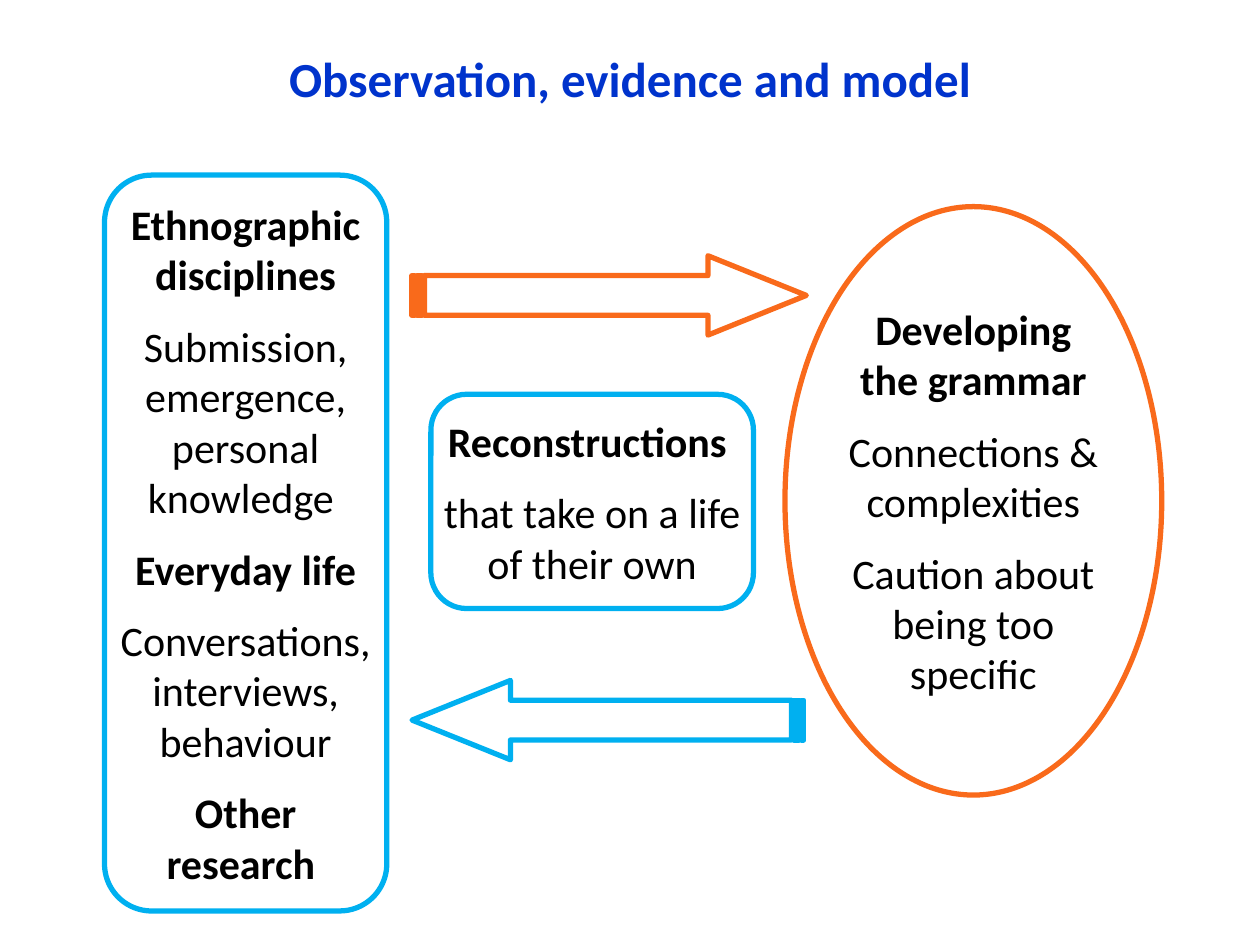
from lxml import etree
from pptx import Presentation
from pptx.dml.color import RGBColor
from pptx.enum import shapes, text
from pptx.oxml.ns import qn
from pptx.util import Inches
from pptx import util as u

HUES = {
    "title": "0033CC",
    "text": "000000",
    "fill": "FFFFFF",
    "field": "00B0F0",
    "model": "F96A1B",
}
FORMS = shapes.MSO_SHAPE


class Board:
    font = "Calibri"
    size = 24
    edge = 3
    clear = 75

    def __init__(self, slide):
        self.slide = slide

    def hue(self, name):
        return RGBColor.from_string(HUES[name])

    def label(self, para, words, bold, size, hue):
        para.alignment = text.PP_ALIGN.CENTER
        run = para.add_run()
        run.text = words
        run.font.name = self.font
        run.font.size = u.Pt(size)
        run.font.bold = bold
        run.font.color.rgb = self.hue(hue)

    def title(self, spot, words):
        box = self.slide.shapes.add_textbox(*map(Inches, spot))
        frame = box.text_frame
        frame.word_wrap = True
        frame.vertical_anchor = text.MSO_ANCHOR.MIDDLE
        self.label(frame.paragraphs[0], words, True, 28, "title")

    def shape(self, form, spot, hue):
        item = self.slide.shapes.add_shape(form, *map(Inches, spot))
        item.shadow.inherit = False
        item.fill.solid()
        item.fill.fore_color.rgb = self.hue("fill")
        tint = item.element.spPr.find(qn("a:solidFill"))[0]
        etree.SubElement(tint, qn("a:alpha"), val=str(self.clear * 1000))
        item.line.color.rgb = self.hue(hue)
        item.line.width = u.Pt(self.edge)
        return item

    def panel(self, form, spot, hue, lines):
        frame = self.shape(form, spot, hue).text_frame
        frame.word_wrap = True
        frame.auto_size = text.MSO_AUTO_SIZE.SHAPE_TO_FIT_TEXT
        frame.vertical_anchor = text.MSO_ANCHOR.MIDDLE
        frame.margin_left = frame.margin_right = Inches(0.01)
        frame.margin_top = frame.margin_bottom = Inches(0.08)
        for i, (words, bold) in enumerate(lines):
            para = frame.add_paragraph() if i else frame.paragraphs[0]
            para.space_before = para.space_after = u.Pt(6)
            self.label(para, words, bold, self.size, "text")

    def arrow(self, spot, hue, turn=0):
        item = self.shape(FORMS.STRIPED_RIGHT_ARROW, spot, hue)
        item.adjustments[0] = 0.5
        item.adjustments[1] = 1.24
        item.rotation = turn


def main():
    deck = Presentation()
    deck.slide_width, deck.slide_height = Inches(10), Inches(7.5)
    board = Board(deck.slides.add_slide(deck.slide_layouts[6]))

    board.title((0.75, 0.33, 8.5, 0.58), "Observation, evidence and model")
    board.panel(FORMS.OVAL, (6.23, 1.64, 2.99, 4.67), "model", [
        ("Developing the grammar", True),
        ("Connections & complexities", False),
        ("Caution about being too specific", False),
    ])
    board.panel(FORMS.ROUNDED_RECTANGLE, (0.83, 1.39, 2.24, 5.84), "field", [
        ("Ethnographic disciplines", True),
        ("Submission, emergence, personal knowledge ", False),
        ("Everyday life", True),
        ("Conversations, interviews, behaviour", False),
        ("Other research ", True),
    ])
    board.panel(FORMS.ROUNDED_RECTANGLE, (3.42, 3.13, 2.56, 1.7), "field", [
        ("Reconstructions ", True),
        ("that take on a life of their own", False),
    ])
    board.arrow((3.27, 2.03, 3.13, 0.63), "model")
    board.arrow((3.27, 5.4, 3.11, 0.63), "field", 180)

    deck.save("out.pptx")


if __name__ == "__main__":
    main()
